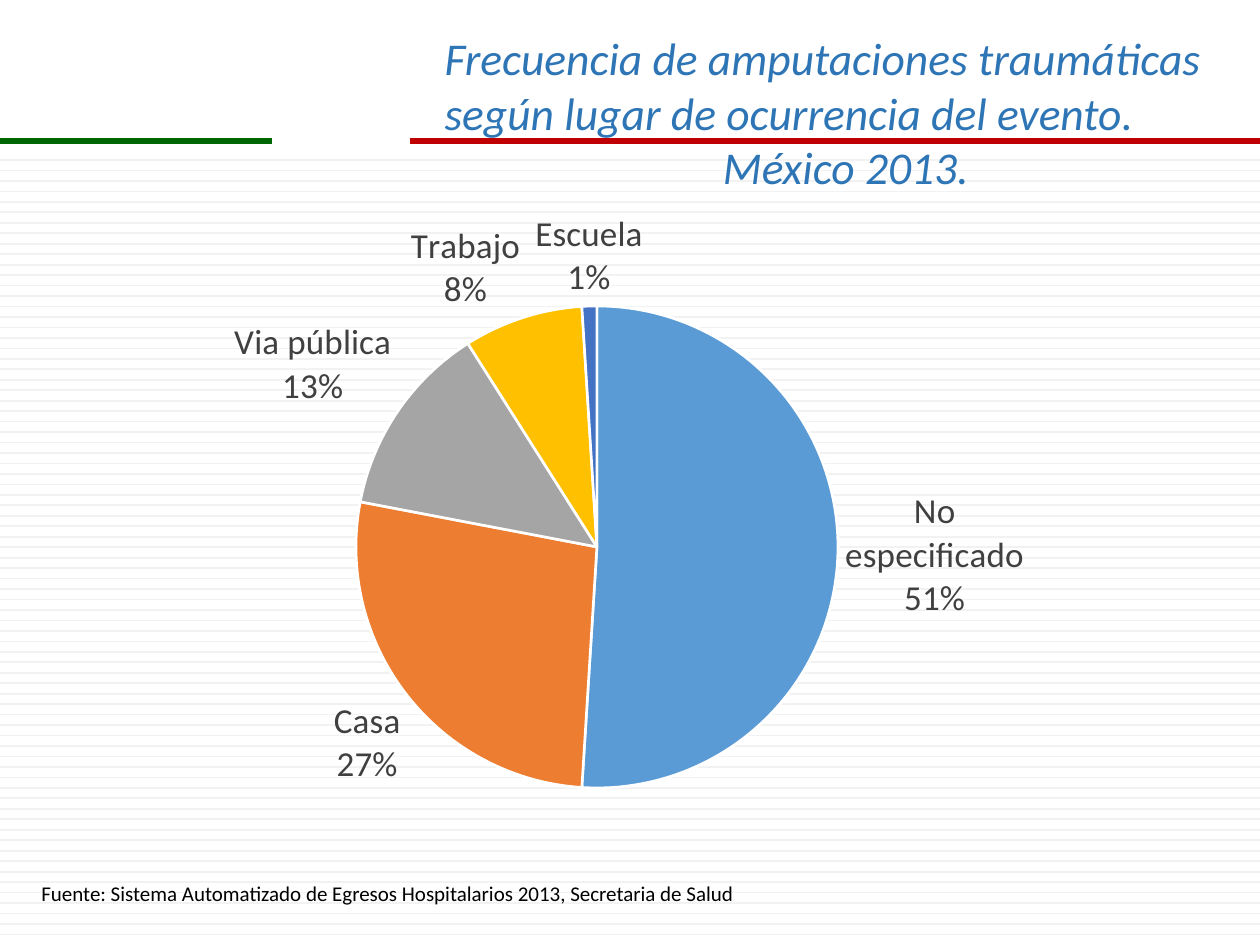
"""Build a slide with a pie chart of traumatic amputations by place of occurrence."""
import lxml.etree
import pptx
import pptx.chart.data
import pptx.dml.color
import pptx.enum.chart
import pptx.enum.shapes
import pptx.enum.text
import pptx.oxml
import pptx.oxml.ns
import pptx.util

Pt = pptx.util.Pt
RGBColor = pptx.dml.color.RGBColor
qn = pptx.oxml.ns.qn

BLACK = RGBColor(0x00, 0x00, 0x00)
WHITE = RGBColor(0xFF, 0xFF, 0xFF)
STRIPE = RGBColor(0xF2, 0xF2, 0xF2)
GREEN = RGBColor(0x00, 0x66, 0x00)
RED = RGBColor(0xC0, 0x00, 0x00)
TITLE_BLUE = RGBColor(0x2E, 0x75, 0xB6)
LABEL_GREY = RGBColor(0x40, 0x40, 0x40)

SLIDE_WIDTH = 720
STRIPE_TOP, STRIPE_GAP, STRIPE_COUNT = 91.44, 5.98, 75
LEFT = pptx.enum.text.PP_ALIGN.LEFT
CENTER = pptx.enum.text.PP_ALIGN.CENTER

TITLE_FORMAT = {"name": "Calibri", "size": Pt(26), "italic": True}
SOURCE_FORMAT = {"name": "Calibri", "size": Pt(12)}
LABEL_FORMAT = {"name": "Calibri", "size": Pt(20)}
LABEL_SETTINGS = {
    "show_category_name": True,
    "show_percentage": True,
    "show_value": False,
    "position": pptx.enum.chart.XL_LABEL_POSITION.OUTSIDE_END,
}

TITLE_LINES = [
    ("Frecuencia de amputaciones traumáticas", LEFT),
    ("según lugar de ocurrencia del evento.", LEFT),
    ("México 2013.", CENTER),
]
SOURCE_LINES = [
    ("Fuente: Sistema Automatizado de Egresos Hospitalarios 2013, Secretaria de Salud", LEFT),
]
PLACES = [
    ("No especificado", 51, RGBColor(0x5B, 0x9B, 0xD5)),
    ("Casa", 27, RGBColor(0xED, 0x7D, 0x31)),
    ("Via pública", 13, RGBColor(0xA5, 0xA5, 0xA5)),
    ("Trabajo", 8, RGBColor(0xFF, 0xC0, 0x00)),
    ("Escuela", 1, RGBColor(0x44, 0x72, 0xC4)),
]
PLOT_LAYOUT = {
    "layoutTarget": "inner", "xMode": "edge", "yMode": "edge",
    "x": 0.28, "y": 0.17, "w": 0.45, "h": 0.74,
}

presentation = pptx.Presentation()
presentation.slide_width = Pt(SLIDE_WIDTH)
presentation.slide_height = Pt(540)
slide = presentation.slides.add_slide(presentation.slide_layouts[6])


def add_rule(start, end, top, color, width):
    connector = slide.shapes.add_connector(
        pptx.enum.shapes.MSO_CONNECTOR.STRAIGHT, Pt(start), Pt(top), Pt(end), Pt(top))
    connector.line.color.rgb = color
    connector.line.width = Pt(width)
    lxml.etree.SubElement(connector._element.spPr, qn("a:effectLst"))


def add_text(left, top, width, height, lines, color, font_format):
    frame = slide.shapes.add_textbox(Pt(left), Pt(top), Pt(width), Pt(height)).text_frame
    frame.word_wrap = True
    for index, (text, alignment) in enumerate(lines):
        paragraph = frame.add_paragraph() if index else frame.paragraphs[0]
        paragraph.alignment = alignment
        run = paragraph.add_run()
        run.text = text
        run.font.color.rgb = color
        for name, value in font_format.items():
            setattr(run.font, name, value)


for row in range(STRIPE_COUNT):
    add_rule(0, SLIDE_WIDTH, STRIPE_TOP + row * STRIPE_GAP, STRIPE, 1)
add_rule(0, 155.5, 80.64, GREEN, 3)
add_rule(234, SLIDE_WIDTH, 80.64, RED, 3)

add_text(16.56, 499.68, 594.72, 21.6, SOURCE_LINES, BLACK, SOURCE_FORMAT)
add_text(246.96, 13.68, 473.04, 101.52, TITLE_LINES, TITLE_BLUE, TITLE_FORMAT)

chart_data = pptx.chart.data.CategoryChartData()
chart_data.categories = [place for place, percent, color in PLACES]
chart_data.add_series("Series 1", [percent for place, percent, color in PLACES])
chart = slide.shapes.add_chart(
    pptx.enum.chart.XL_CHART_TYPE.PIE,
    Pt(28.08), Pt(111.6), Pt(619.92), Pt(372.24), chart_data).chart
chart.has_title = False
chart.has_legend = False
chart.plots[0].vary_by_categories = True

series = chart.plots[0].series[0]
for index, (place, percent, color) in enumerate(PLACES):
    slice_format = series.points[index].format
    slice_format.fill.solid()
    slice_format.fill.fore_color.rgb = color
    slice_format.line.color.rgb = WHITE
    slice_format.line.width = Pt(1.5)

labels = series.data_labels
for name, value in LABEL_SETTINGS.items():
    setattr(labels, name, value)
for font, color in ((chart.font, BLACK), (labels.font, LABEL_GREY)):
    font.color.rgb = color
    for name, value in LABEL_FORMAT.items():
        setattr(font, name, value)
separator = lxml.etree.Element(qn("c:separator"))
separator.text = "\n"
labels._element.find(qn("c:showBubbleSize")).addnext(separator)

plot_area = chart._chartSpace.find(".//" + qn("c:plotArea"))
for old_layout in plot_area.findall(qn("c:layout")):
    plot_area.remove(old_layout)
layout = lxml.etree.Element(qn("c:layout"))
manual_layout = lxml.etree.SubElement(layout, qn("c:manualLayout"))
for name, value in PLOT_LAYOUT.items():
    lxml.etree.SubElement(manual_layout, qn("c:" + name)).set("val", str(value))
plot_area.insert(0, layout)

presentation.save("out.pptx")
